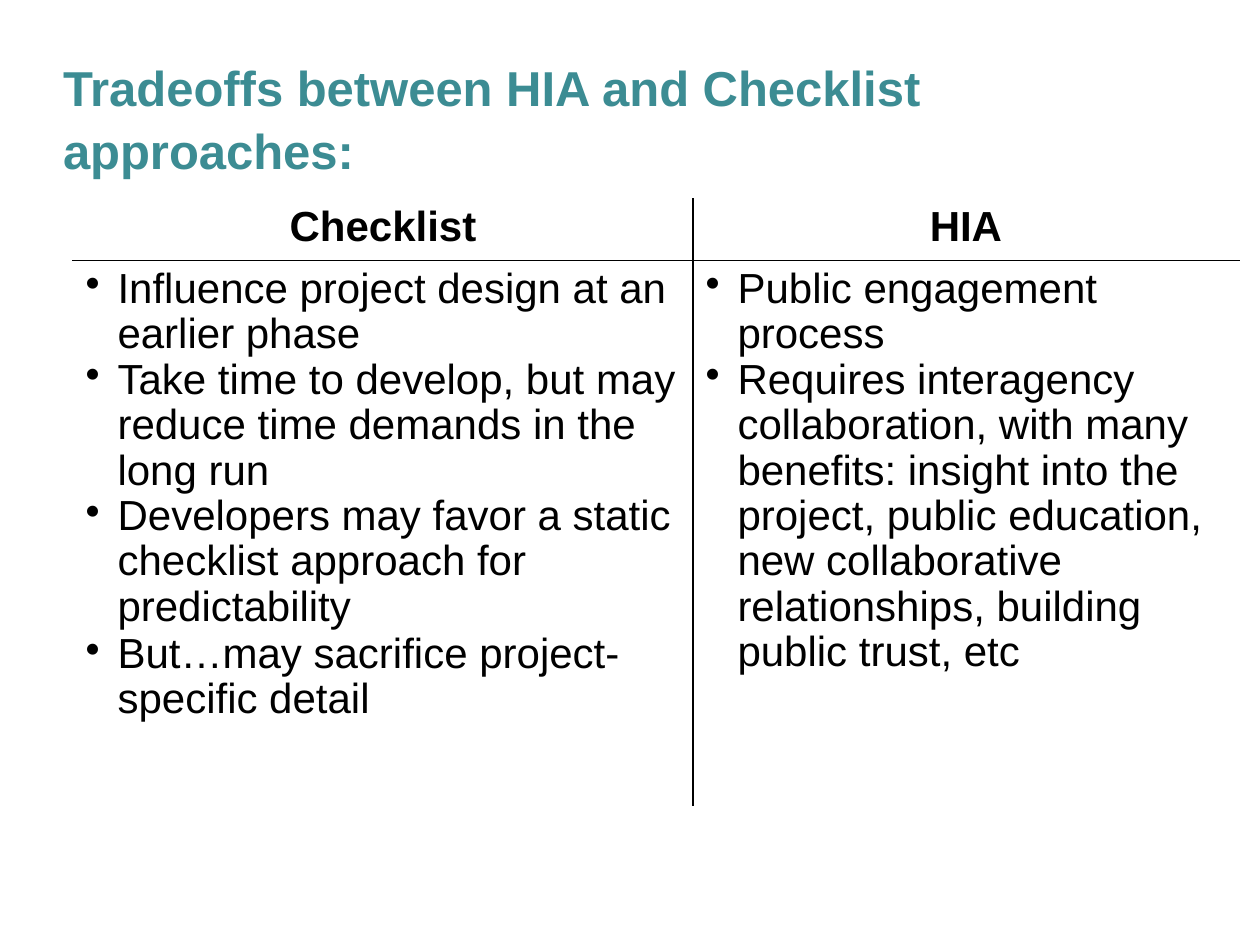
import pptx
import pptx.dml.color
import pptx.enum.text
import pptx.oxml
import pptx.oxml.ns
import pptx.util

PX = 914400 // 126
COLORS = {"title": "3C8C93", "text": "000000", "rule": "000000"}
COLUMNS = {
    "Checklist": [
        "Influence project design at an earlier phase",
        "Take time to develop, but may reduce time demands in the long run",
        "Developers may favor a static checklist approach for predictability",
        "But…may sacrifice project-specific detail",
    ],
    "HIA": [
        "Public engagement process",
        "Requires interagency collaboration, with many benefits: insight into the "
        "project, public education, new collaborative relationships, building "
        "public trust, etc",
    ],
}


class SlideBuilder:
    font_name = "Arial"
    indent = 32

    def __init__(self, slide):
        self.slide = slide

    def format_paragraph(self, paragraph, size, color, bold, spacing):
        paragraph.line_spacing = spacing
        for run in paragraph.runs:
            run.font.name = self.font_name
            run.font.size = pptx.util.Pt(size)
            run.font.bold = bold
            run.font.color.rgb = pptx.dml.color.RGBColor.from_string(COLORS[color])

    def title(self, text, left, top, width, height):
        box = self.slide.shapes.add_textbox(left * PX, top * PX, width * PX, height * PX)
        frame = box.text_frame
        frame.word_wrap = True
        frame.margin_left = frame.margin_right = 0
        frame.margin_top = frame.margin_bottom = 0
        frame.text = text
        self.format_paragraph(frame.paragraphs[0], 28, "title", True, 1.07)

    def table(self, left, top, widths, heights):
        shape = self.slide.shapes.add_table(
            len(heights), len(widths), left * PX, top * PX, sum(widths) * PX, sum(heights) * PX
        )
        table = shape.table
        table.first_row = table.horz_banding = False
        for column, width in zip(table.columns, widths):
            column.width = width * PX
        for row, height in zip(table.rows, heights):
            row.height = height * PX
        return table

    def cell_style(self, cell, sides):
        """Clear the fill and rule the given sides, listed in the order L, R, T, B."""
        properties = cell._tc.get_or_add_tcPr()
        for side in sides:
            properties.append(pptx.oxml.parse_xml(
                f'<a:ln{side} {pptx.oxml.ns.nsdecls("a")} w="12700"><a:solidFill>'
                f'<a:srgbClr val="{COLORS["rule"]}"/></a:solidFill></a:ln{side}>'
            ))
        cell.fill.background()

    def heading(self, cell, text):
        cell.text_frame.text = text
        paragraph = cell.text_frame.paragraphs[0]
        paragraph.alignment = pptx.enum.text.PP_ALIGN.CENTER
        self.format_paragraph(paragraph, 24, "text", True, 0.97)

    def bullets(self, cell, items):
        cell.text_frame.text = "\n".join(items)
        for paragraph in cell.text_frame.paragraphs:
            properties = paragraph._p.get_or_add_pPr()
            properties.set("marL", str(self.indent * PX))
            properties.set("indent", str(-self.indent * PX))
            properties.append(pptx.oxml.parse_xml(
                f'<a:buChar {pptx.oxml.ns.nsdecls("a")} char="•"/>'
            ))
            self.format_paragraph(paragraph, 24, "text", False, 0.97)


def main():
    presentation = pptx.Presentation()
    presentation.slide_width = pptx.util.Inches(10)
    presentation.slide_height = pptx.util.Inches(7.5)
    builder = SlideBuilder(presentation.slides.add_slide(presentation.slide_layouts[6]))

    builder.title("Tradeoffs between HIA and Checklist approaches:", 63, 53, 1092, 84)

    table = builder.table(21, 199, widths=[52, 620, 546], heights=[60, 546, 52])
    table.cell(0, 0).merge(table.cell(2, 0))
    table.cell(2, 1).merge(table.cell(2, 2))
    for row in range(3):
        builder.cell_style(table.cell(row, 0), "")
    for index, (heading, items) in enumerate(COLUMNS.items(), start=1):
        inner_side = "R" if index == 1 else "L"
        builder.heading(table.cell(0, index), heading)
        builder.cell_style(table.cell(0, index), inner_side + "B")
        builder.bullets(table.cell(1, index), items)
        builder.cell_style(table.cell(1, index), inner_side + "T")
        builder.cell_style(table.cell(2, index), "")
    table.cell(1, 1).text_frame.paragraphs[-1].space_before = pptx.util.Pt(1)

    presentation.save("out.pptx")


if __name__ == "__main__":
    main()
